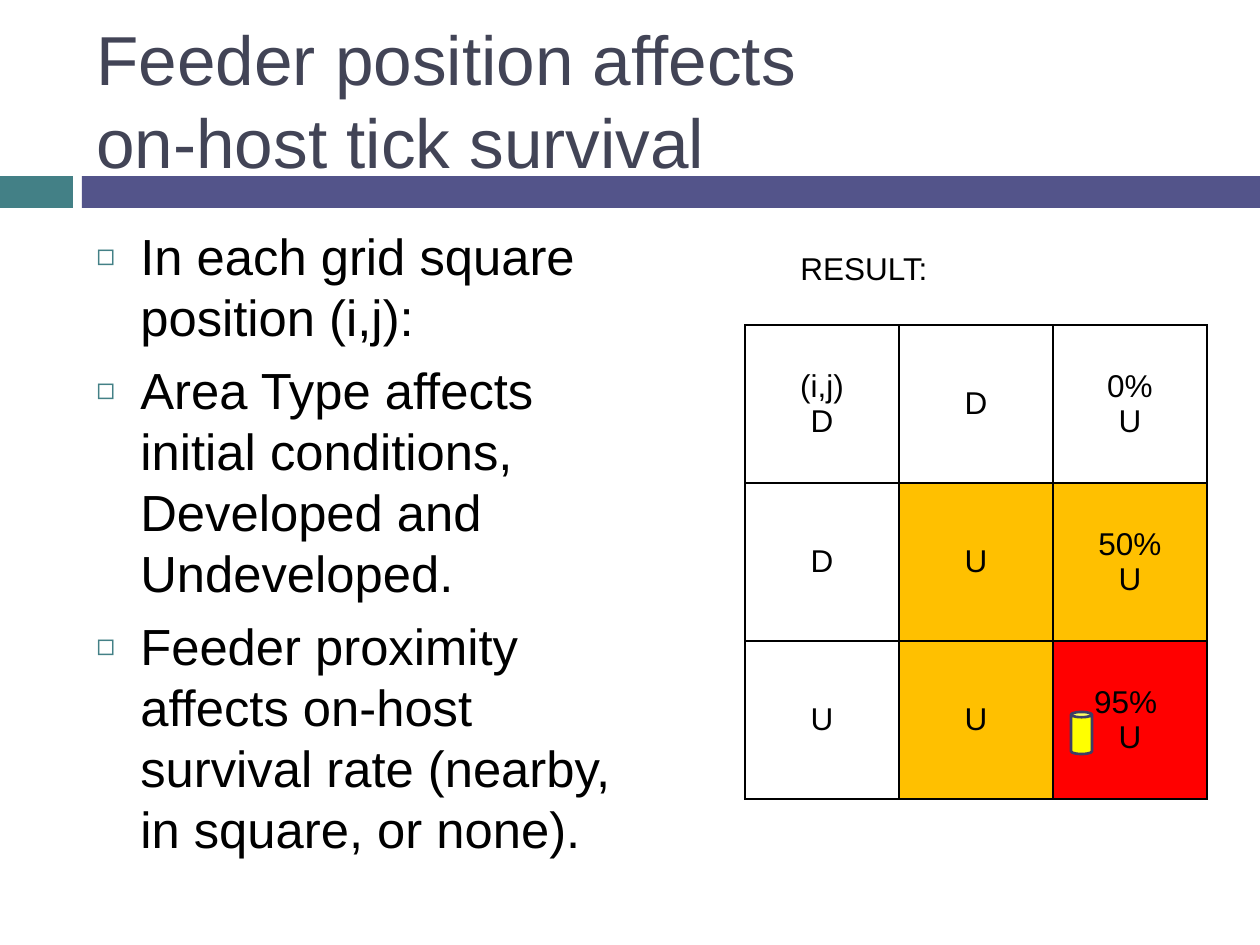
from lxml import etree
from pptx import Presentation
from pptx import util as u
from pptx.dml.color import RGBColor
from pptx.enum import shapes, text
from pptx.oxml import ns

# Content
TITLE = ["Feeder position affects ", "on-host tick survival"]
BULLETS = [
    "In each grid square position (i,j):",
    "Area Type affects initial conditions, Developed and Undeveloped.",
    "Feeder proximity affects on-host survival rate (nearby, in square, or none).",
]
RESULT_LABEL = "RESULT:"
# Each cell: lines of text, colour name or None
GRID = [
    [(["(i,j)", "D"], None), (["D"], None), (["0%", "U"], None)],
    [(["D"], None), (["U"], "nearby"), (["50%", "U"], "nearby")],
    [(["U"], None), (["U"], "nearby"), (["95% ", "U"], "feeder_square")],
]

THEME = {
    "font": "Arial",
    "colors": {
        "title": "424456", "text": "000000", "teal": "438086", "purple": "53548A",
        "nearby": "FFC000", "feeder_square": "FF0000",
        "feeder": "FFFF00", "feeder_line": "3D3E66",
    },
    "sizes": {"title": 39.6, "body": 29, "label": 18},
}

# Geometry in px
SLIDE_WIDTH, SLIDE_HEIGHT = 1260, 945
BAR_TOP, BAR_HEIGHT = 176, 32
TEAL_WIDTH, PURPLE_LEFT = 73, 82
TITLE_BOX = (84, 31, 1124, 136)
BODY_BOX = (84, 219, 567, 630)
LABEL_BOX = (788, 243, 210, 51)
GRID_LEFT, GRID_TOP = 745, 325
CELL_WIDTH, CELL_HEIGHT = 154, 158
FEEDER_BOX = (1071, 712, 21, 42)
BULLET_INDENT = 44


def px(value):
    return u.Emu(round(value * 914400 / 126))


def color(name):
    return RGBColor.from_string(THEME["colors"][name])


def add_run(paragraph, content, size, color_name="text"):
    run = paragraph.add_run()
    run.text = content
    run.font.name = THEME["font"]
    run.font.size = u.Pt(THEME["sizes"][size])
    run.font.color.rgb = color(color_name)


def add_text_frame(slide, box):
    frame = slide.shapes.add_textbox(*map(px, box)).text_frame
    frame.word_wrap = True
    return frame


def paragraphs_for(frame, lines):
    for index, line in enumerate(lines):
        yield (frame.add_paragraph() if index else frame.paragraphs[0]), line


def add_shape(slide, kind, box, fill, line=None):
    shape = slide.shapes.add_shape(kind, *map(px, box))
    shape.shadow.inherit = False
    shape.fill.solid()
    shape.fill.fore_color.rgb = color(fill)
    if line:
        shape.line.color.rgb = color(line)
        shape.line.width = u.Pt(1.5)
    else:
        shape.line.fill.background()


def add_bullet(paragraph):
    properties = paragraph._p.get_or_add_pPr()
    properties.set("marL", str(px(BULLET_INDENT)))
    properties.set("indent", str(-px(BULLET_INDENT)))
    bullet_color = etree.SubElement(properties, ns.qn("a:buClr"))
    etree.SubElement(bullet_color, ns.qn("a:srgbClr"), val=THEME["colors"]["teal"])
    etree.SubElement(properties, ns.qn("a:buSzPct"), val="60000")
    etree.SubElement(properties, ns.qn("a:buFont"), typeface=THEME["font"])
    etree.SubElement(properties, ns.qn("a:buChar"), char="◻")


def add_borders(cell):
    properties = cell._tc.get_or_add_tcPr()
    for index, side in enumerate(("lnL", "lnR", "lnT", "lnB")):
        line = etree.Element(ns.qn(f"a:{side}"), w=str(u.Pt(1)))
        fill = etree.SubElement(line, ns.qn("a:solidFill"))
        etree.SubElement(fill, ns.qn("a:srgbClr"), val=THEME["colors"]["text"])
        properties.insert(index, line)


def add_grid(slide):
    rows, columns = len(GRID), len(GRID[0])
    box = (GRID_LEFT, GRID_TOP, columns * CELL_WIDTH, rows * CELL_HEIGHT)
    table = slide.shapes.add_table(rows, columns, *map(px, box)).table
    table.first_row = table.horz_banding = False
    for column in table.columns:
        column.width = px(CELL_WIDTH)
    for row_index, row in enumerate(GRID):
        table.rows[row_index].height = px(CELL_HEIGHT)
        for column_index, (lines, fill) in enumerate(row):
            cell = table.cell(row_index, column_index)
            cell.vertical_anchor = text.MSO_ANCHOR.MIDDLE
            if fill:
                cell.fill.solid()
                cell.fill.fore_color.rgb = color(fill)
            else:
                cell.fill.background()
            add_borders(cell)
            for paragraph, line in paragraphs_for(cell.text_frame, lines):
                paragraph.alignment = text.PP_ALIGN.CENTER
                add_run(paragraph, line, "label")


def main():
    presentation = Presentation()
    presentation.slide_width, presentation.slide_height = px(SLIDE_WIDTH), px(SLIDE_HEIGHT)
    slide = presentation.slides.add_slide(presentation.slide_layouts[6])

    # Divider bars
    rectangle = shapes.MSO_SHAPE.RECTANGLE
    add_shape(slide, rectangle, (0, BAR_TOP, TEAL_WIDTH, BAR_HEIGHT), "teal")
    purple_box = (PURPLE_LEFT, BAR_TOP, SLIDE_WIDTH - PURPLE_LEFT, BAR_HEIGHT)
    add_shape(slide, rectangle, purple_box, "purple")

    # Title
    frame = add_text_frame(slide, TITLE_BOX)
    frame.vertical_anchor = text.MSO_ANCHOR.MIDDLE
    paragraph = frame.paragraphs[0]
    for index, line in enumerate(TITLE):
        if index:
            paragraph.add_line_break()
        add_run(paragraph, line, "title", "title")

    # Bullets
    frame = add_text_frame(slide, BODY_BOX)
    for paragraph, line in paragraphs_for(frame, BULLETS):
        paragraph.space_before = u.Pt(7)
        add_bullet(paragraph)
        add_run(paragraph, line, "body")

    # Result grid with its label and feeder
    add_grid(slide)
    label = add_text_frame(slide, LABEL_BOX)
    add_run(label.paragraphs[0], RESULT_LABEL, "label")
    add_shape(slide, shapes.MSO_SHAPE.CAN, FEEDER_BOX, "feeder", "feeder_line")

    presentation.save("out.pptx")


if __name__ == "__main__":
    main()
